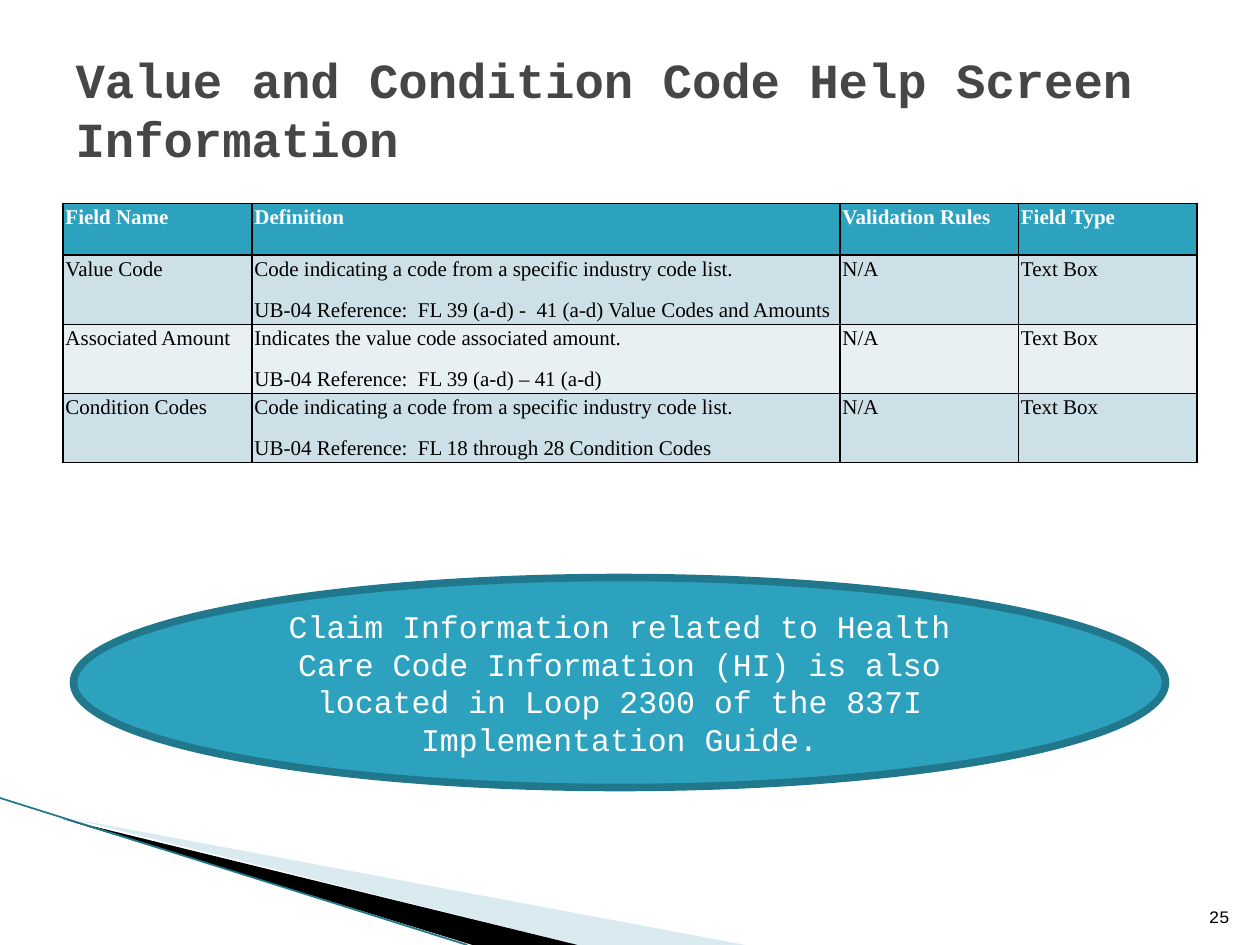
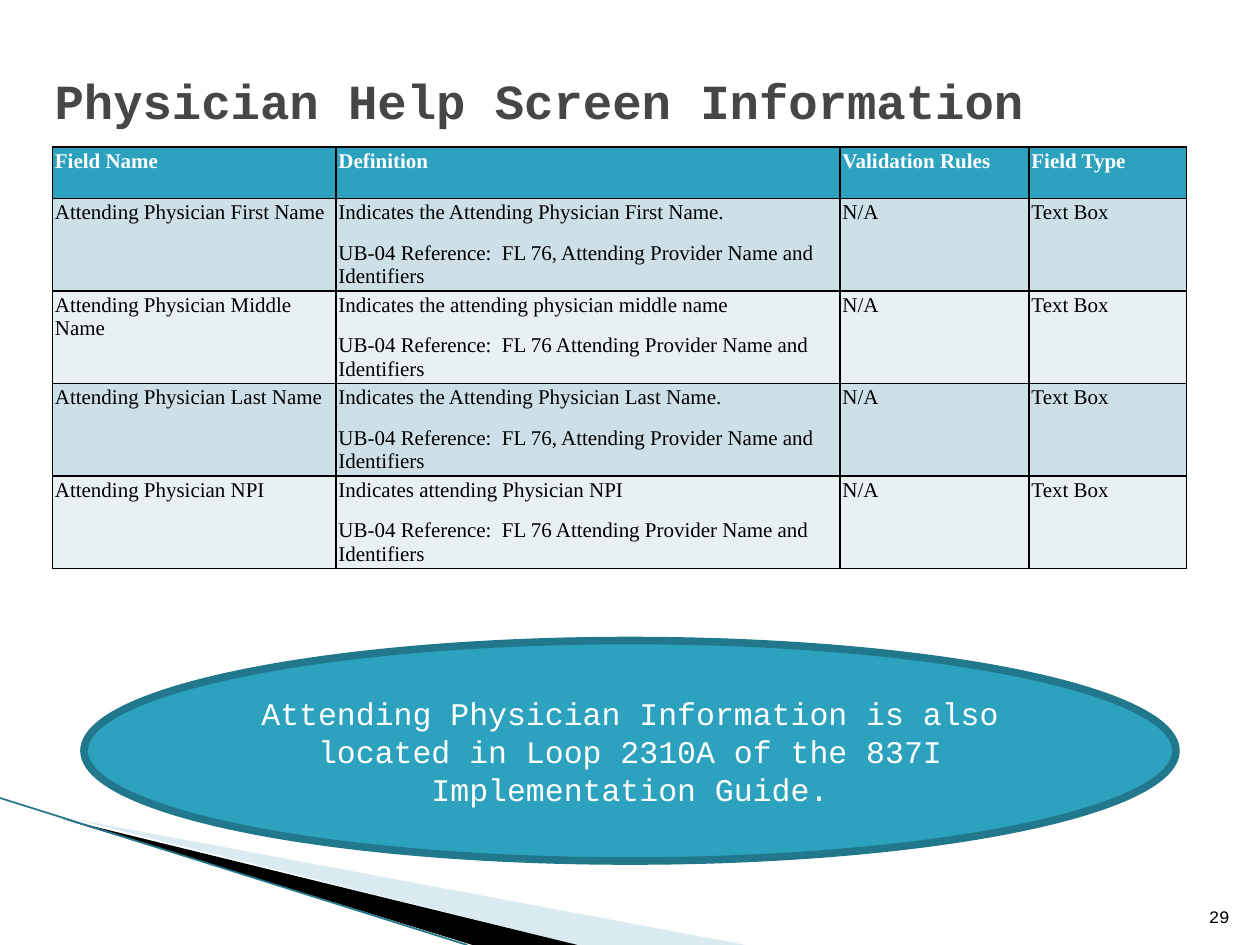
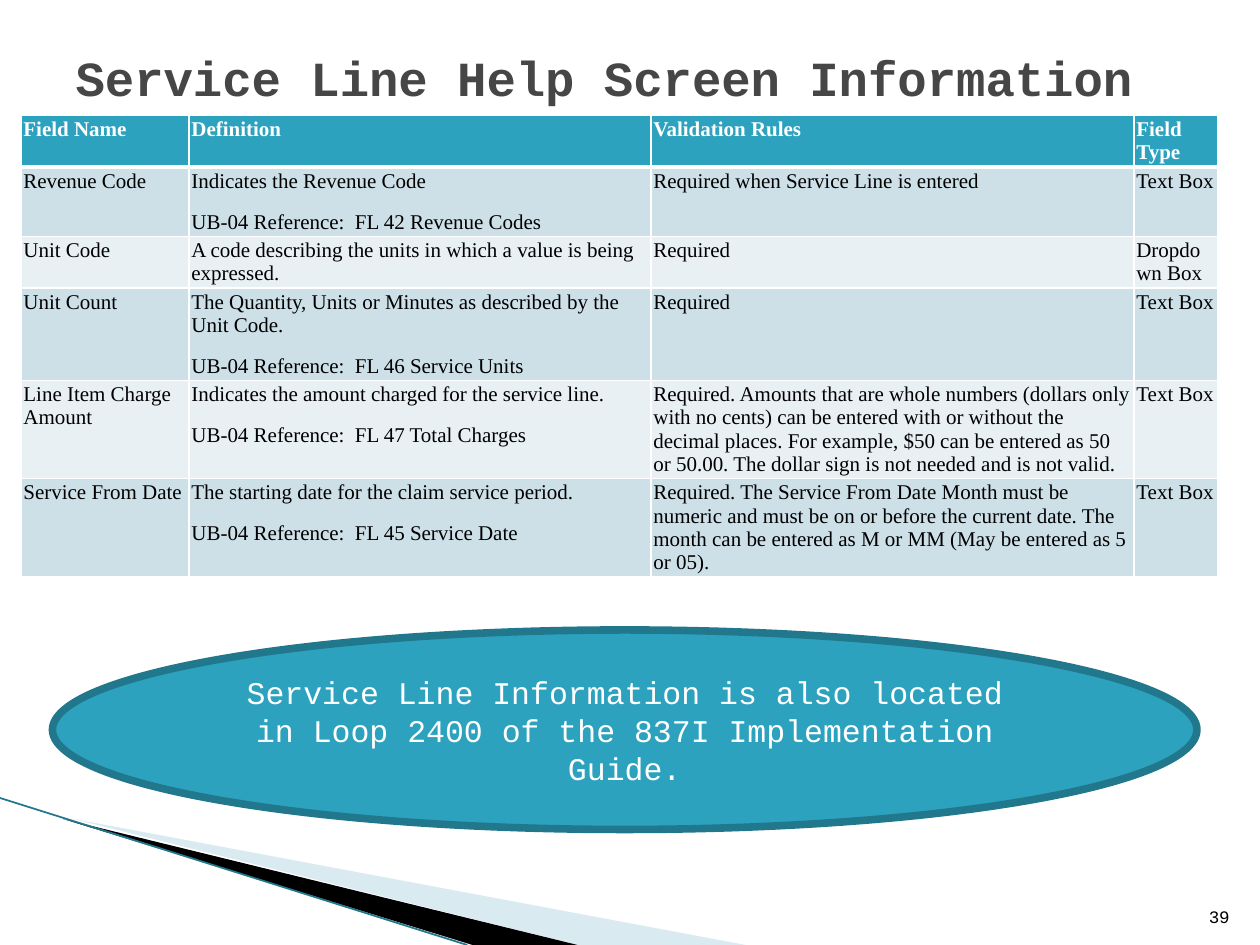
from dataclasses import dataclass

from lxml import etree
from pptx import Presentation
from pptx.dml.color import RGBColor
from pptx.enum.shapes import MSO_CONNECTOR, MSO_SHAPE
from pptx.enum.text import MSO_ANCHOR, MSO_AUTO_SIZE, PP_ALIGN
from pptx.oxml.ns import qn
from pptx.util import Inches, Pt

LEFT, MID, RIGHT = PP_ALIGN.LEFT, PP_ALIGN.CENTER, PP_ALIGN.RIGHT
CENTER, BOTTOM = MSO_ANCHOR.MIDDLE, MSO_ANCHOR.BOTTOM
NO_FIT = MSO_AUTO_SIZE.NONE
OVAL, LINE = MSO_SHAPE.OVAL, MSO_CONNECTOR.STRAIGHT
WIDE, HIGH = Inches(10), Inches(7.5)
COLS, ROWS = 120, 90
UNIT = WIDE / COLS
TITLE_ONLY = 5
ROW = 4.9
HEADS = ("Field Name", "Definition", "Validation Rules", "Field Type")
REF = "UB-04 Reference:  FL "
NAMES = " Attending Provider Name and Identifiers"
CODES = "Code indicating a code from a specific industry code list."
GUIDE = " of the 837I Implementation Guide."


@dataclass(frozen=True)
class Theme:
    """Colours, fonts and type sizes of the deck."""
    mono: str = "Courier New"
    serif: str = "Times New Roman"
    teal: str = "2DA2BF"
    deep: str = "21788D"
    pale: str = "A0CBDC"
    odd: str = "CDE0E8"
    even: str = "E8F0F4"
    gray: str = "464646"
    black: str = "000000"
    white: str = "FFFFFF"
    head: int = 28
    note: int = 18
    cell: int = 12
    foot: int = 10


THEME = Theme()


def grid(*cells):
    """Turn grid cells into lengths."""
    return [round(cell * UNIT) for cell in cells]


def rgb(hue):
    """Turn a hex string into a colour."""
    return RGBColor.from_string(hue)


def style(para, face, size, hue, bold=False, align=LEFT):
    """Set the font and alignment of a paragraph."""
    para.alignment = align
    font = para.font
    font.name, font.size, font.bold = face, Pt(size), bold
    font.color.rgb = rgb(hue)


def wedge(slide, points, hue, alpha=100):
    """Draw a filled outline through grid points."""
    build = slide.shapes.build_freeform(*points[0], scale=UNIT)
    build.add_line_segments(points[1:])
    shape = build.convert_to_shape()
    shape.shadow.inherit = False
    shape.fill.solid()
    shape.fill.fore_color.rgb = rgb(hue)
    shape.line.fill.background()
    if alpha < 100:
        tone = next(shape.element.iter(qn("a:srgbClr")))
        etree.SubElement(tone, qn("a:alpha"), val=str(alpha * 1000))


def band(slide):
    """Draw the sweep in the lower left corner."""
    wedge(slide, [(6.6, 78.1), (71.4, 90), (54.7, 90), (6.6, 78)], THEME.pale, 40)
    wedge(slide, [(6.4, 77.9), (54.8, 90), (44.6, 90), (6.5, 78)], THEME.black)
    edge = slide.shapes.add_connector(LINE, *grid(0, 76, 44.5, ROWS))
    edge.line.color.rgb = rgb(THEME.deep)
    edge.line.width = Pt(1)
    etree.SubElement(edge.element.spPr, qn("a:effectLst"))


def title(slide, box, text):
    """Place and format the title."""
    shape = slide.shapes.title
    shape.left, shape.top, shape.width, shape.height = grid(*box)
    frame = shape.text_frame
    frame.text = text
    frame.word_wrap, frame.auto_size = True, NO_FIT
    frame.vertical_anchor = CENTER
    style(frame.paragraphs[0], THEME.mono, THEME.head, THEME.gray, True)


def border(cell, hue, sides):
    """Rule the sides of a cell, given as side letter and points."""
    props = cell._tc.get_or_add_tcPr()
    for side, width in sides.items():
        rule = etree.SubElement(props, qn(f"a:ln{side}"), w=str(Pt(width)))
        fill = etree.SubElement(rule, qn("a:solidFill"))
        etree.SubElement(fill, qn("a:srgbClr"), val=hue)


def fill_cell(cell, text, back, fore, bold):
    """Write the paragraphs of a cell on its colour."""
    cell.margin_left = cell.margin_right = Inches(0.02)
    cell.margin_top = cell.margin_bottom = Inches(0.02)
    cell.fill.solid()
    cell.fill.fore_color.rgb = rgb(back)
    cell.text_frame.text = text
    for para in cell.text_frame.paragraphs:
        style(para, THEME.serif, THEME.cell, fore, bold)
        para.space_after = Pt(10)


def table(slide, left, top, widths, rows, hue, rule):
    """Build the field table with ruled cells."""
    rows = [HEADS, *rows]
    box = grid(left, top, sum(widths), ROW * len(rows))
    tab = slide.shapes.add_table(len(rows), len(widths), *box).table
    for col, width in zip(tab.columns, grid(*widths)):
        col.width = width
    for i, row in enumerate(rows):
        tab.rows[i].height = grid(ROW)[0]
        back = THEME.teal if i == 0 else THEME.odd if i % 2 else THEME.even
        fore = THEME.black if i else THEME.white
        sides = {"L": 1, "R": 1, "T": rule if i == 1 else 1,
                 "B": rule if i == 0 else 1}
        for j, text in enumerate(row):
            border(tab.cell(i, j), hue, sides)
            fill_cell(tab.cell(i, j), text, back, fore, i == 0)


def callout(slide, box, text):
    """Draw the oval note."""
    oval = slide.shapes.add_shape(OVAL, *grid(*box))
    oval.shadow.inherit = False
    oval.fill.solid()
    oval.fill.fore_color.rgb = rgb(THEME.teal)
    oval.line.color.rgb = rgb(THEME.deep)
    oval.line.width = Pt(4.33)
    frame = oval.text_frame
    frame.text, frame.word_wrap = text, True
    frame.vertical_anchor = CENTER
    style(frame.paragraphs[0], THEME.mono, THEME.note, THEME.white, align=MID)


def number(slide, text):
    """Write the page number in the lower right corner."""
    frame = slide.shapes.add_textbox(*grid(113.5, 84.1, 4.8, 4.8)).text_frame
    frame.text, frame.word_wrap = text, True
    frame.vertical_anchor = BOTTOM
    style(frame.paragraphs[0], THEME.mono, THEME.foot, THEME.black, align=RIGHT)


def page(deck, head, body, note, num):
    """Add one help screen slide."""
    slide = deck.slides.add_slide(deck.slide_layouts[TITLE_ONLY])
    band(slide)
    table(slide, *body)
    number(slide, num)
    title(slide, *head)
    callout(slide, *note)


def plain(name, text, ref):
    """Make a text box row without validation rules."""
    return name, f"{text}\n{REF}{ref}", "N/A", "Text Box"


VALUES = [
    plain("Value Code", CODES, "39 (a-d) -  41 (a-d) Value Codes and Amounts"),
    plain("Associated Amount", "Indicates the value code associated amount.",
          "39 (a-d) – 41 (a-d)"),
    plain("Condition Codes", CODES, "18 through 28 Condition Codes"),
]
DOCTORS = [
    plain("Attending Physician First Name",
          "Indicates the Attending Physician First Name.", "76," + NAMES),
    plain("Attending Physician Middle Name",
          "Indicates the attending physician middle name", "76" + NAMES),
    plain("Attending Physician Last Name",
          "Indicates the Attending Physician Last Name.", "76," + NAMES),
    plain("Attending Physician NPI",
          "Indicates attending Physician NPI", "76" + NAMES),
]
SERVICE = [
    ("Revenue Code", f"Indicates the Revenue Code\n{REF}42 Revenue Codes",
     "Required when Service Line is entered", "Text Box"),
    ("Unit Code",
     "A code describing the units in which a value is being expressed.",
     "Required", "Dropdown Box"),
    ("Unit Count",
     "The Quantity, Units or Minutes as described by the Unit Code.\n"
     f"{REF}46 Service Units", "Required", "Text Box"),
    ("Line Item Charge Amount",
     "Indicates the amount charged for the service line.\n"
     f"{REF}47 Total Charges",
     "Required. Amounts that are whole numbers (dollars only with no cents) "
     "can be entered with or without the decimal places. For example, $50 can "
     "be entered as 50 or 50.00. The dollar sign is not needed and is not "
     "valid.", "Text Box"),
    ("Service From Date",
     "The starting date for the claim service period.\n"
     f"{REF}45 Service Date",
     "Required. The Service From Date Month must be numeric and must be on or "
     "before the current date. The month can be entered as M or MM (May be "
     "entered as 5 or 05).", "Text Box"),
]


def main():
    """Build and save the deck."""
    deck = Presentation()
    deck.slide_width, deck.slide_height = WIDE, HIGH
    page(deck,
         ((6, 3.6, 108, 13.4), "Value and Condition Code Help Screen Information"),
         (6, 19.4, (18, 56, 17, 17), VALUES, THEME.black, 1),
         ((7, 55, 104, 20), "Claim Information related to Health Care Code "
          "Information (HI) is also located in Loop 2300" + GUIDE), "25")
    page(deck,
         ((4, 5, 108, 9), "Physician Help Screen Information"),
         (5, 14, (27, 48, 18, 15), DOCTORS, THEME.black, 1),
         ((8, 61, 104, 21), "Attending Physician Information is also located "
          "in Loop 2310A" + GUIDE), "29")
    page(deck,
         ((6, 3.6, 108, 7.4), "Service Line Help Screen Information"),
         (2, 11, (16, 44, 46, 8), SERVICE, THEME.white, 3),
         ((5, 60, 109, 19), "Service Line Information is also located "
          "in Loop 2400" + GUIDE), "39")
    deck.save("out.pptx")


if __name__ == "__main__":
    main()
